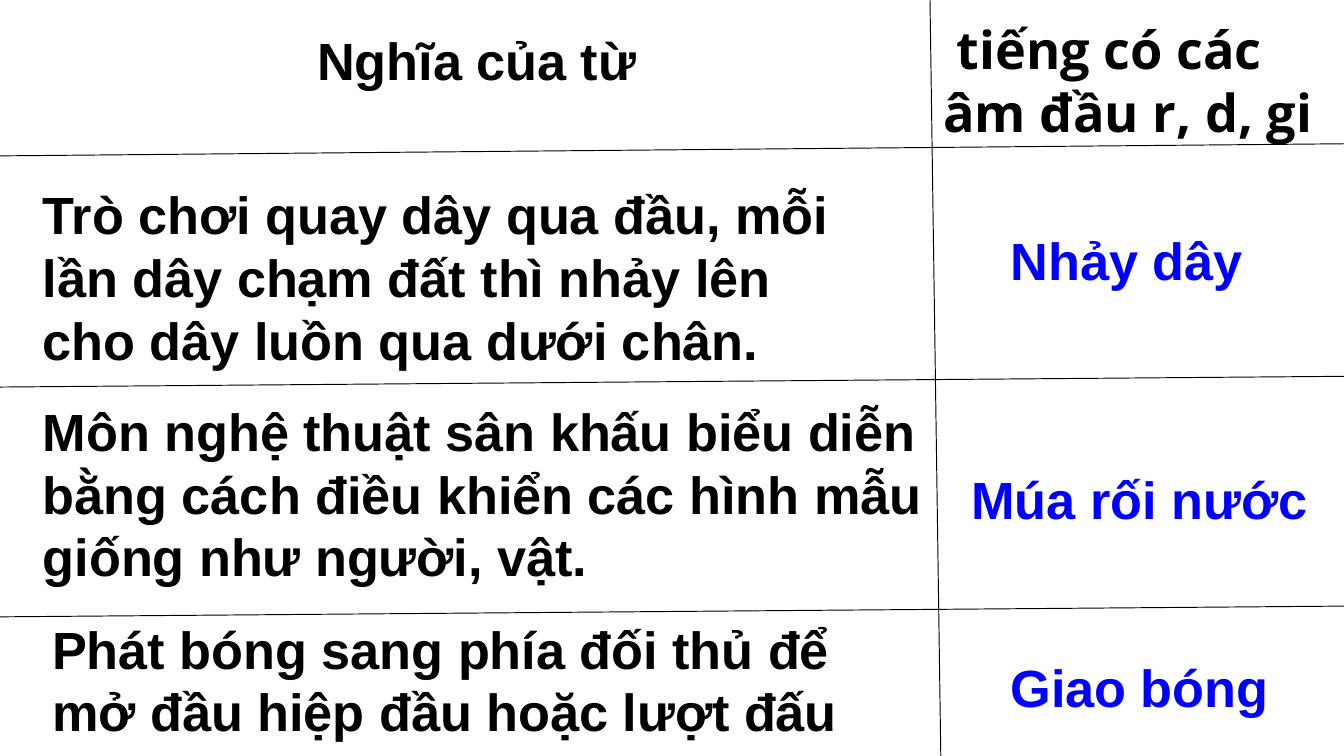
from dataclasses import dataclass

from pptx import Presentation
from pptx.dml.color import RGBColor
from pptx.enum.shapes import MSO_CONNECTOR as Connector
from pptx.enum.text import MSO_ANCHOR as Anchor, MSO_AUTO_SIZE as AutoSize, PP_ALIGN as Align
from pptx.oxml.ns import qn
from pptx.shapes.base import BaseShape
from pptx.slide import Slide
from pptx.util import Inches, Pt

PAGE_WIDTH = 10
PAGE_HEIGHT = PAGE_WIDTH * 9 / 16


@dataclass(frozen=True)
class Theme:
    ink: RGBColor = RGBColor(0x00, 0x00, 0x00)
    answer: RGBColor = RGBColor(0x00, 0x00, 0xFF)
    font: str = "Arial"
    heading_font: str = "Open Sans"
    text_size: Pt = Pt(28)
    line_width: Pt = Pt(0.5)


THEME = Theme()


@dataclass(frozen=True)
class Label:
    text: str
    left: float
    top: float
    width: float
    height: float
    color: RGBColor = THEME.ink
    font: str = THEME.font
    wrap: bool = True


@dataclass(frozen=True)
class Rule:
    start_x: float
    start_y: float
    end_x: float
    end_y: float


HEADING = Label("Nghĩa của từ", 2.26, 0.16, 2.61, 0.57, wrap=False)
SOUND_HEADING = Label(" tiếng có các âm đầu r, d, gi", 6.92, 0.08, 3.09, 1.04,
                      font=THEME.heading_font)

MEANINGS = [
    Label("Trò chơi quay dây qua đầu, mỗi lần dây chạm đất thì nhảy lên "
          "cho dây luồn qua dưới chân.", 0.22, 1.31, 6.06, 1.51),
    Label("Môn nghệ thuật sân khấu biểu diễn bằng cách điều khiển các hình mẫu "
          "giống như người, vật.", 0.22, 2.92, 6.78, 1.51),
    Label("Phát bóng sang phía đối thủ để mở đầu hiệp đầu hoặc lượt đấu",
          0.29, 4.54, 6.62, 1.04),
]

ANSWERS = [
    Label(text, left, top, width, 0.57, color=THEME.answer, wrap=False)
    for text, left, top, width in [
        ("Nhảy dây", 7.42, 1.65, 1.95),
        ("Múa rối nước", 7.13, 3.43, 2.73),
        ("Giao bóng", 7.42, 4.83, 2.14),
    ]
]

ROW_RULES = [Rule(0, left_y, PAGE_WIDTH, right_y)
             for left_y, right_y in [(1.16, 1.07), (2.88, 2.8), (4.59, 4.51)]]
COLUMN_RULE = Rule(7, PAGE_HEIGHT, 6.92, 0)


def draw_rule(page: Slide, rule: Rule) -> None:
    line = page.shapes.add_connector(
        Connector.STRAIGHT, Inches(rule.start_x), Inches(rule.start_y),
        Inches(rule.end_x), Inches(rule.end_y))
    line.line.color.rgb = THEME.ink
    line.line.width = THEME.line_width
    # An empty effect list removes the connector's shadow
    properties = line._element.spPr
    properties.append(properties.makeelement(qn("a:effectLst"), {}))


def fill_label(box: BaseShape, label: Label) -> None:
    box.left, box.top = Inches(label.left), Inches(label.top)
    box.width, box.height = Inches(label.width), Inches(label.height)
    frame = box.text_frame
    frame.text = label.text
    frame.word_wrap = label.wrap
    frame.auto_size = AutoSize.SHAPE_TO_FIT_TEXT
    frame.vertical_anchor = Anchor.TOP
    para = frame.paragraphs[0]
    para.alignment = Align.LEFT
    for span in para.runs:
        span.font.name = label.font
        span.font.size = THEME.text_size
        span.font.bold = True
        span.font.color.rgb = label.color


def add_label(page: Slide, label: Label) -> None:
    box = page.shapes.add_textbox(Inches(label.left), Inches(label.top),
                                  Inches(label.width), Inches(label.height))
    fill_label(box, label)


def main() -> None:
    deck = Presentation()
    deck.slide_width, deck.slide_height = Inches(PAGE_WIDTH), Inches(PAGE_HEIGHT)
    page = deck.slides.add_slide(deck.slide_layouts.get_by_name("Title Only"))

    # Grid lines
    for rule in [*ROW_RULES, COLUMN_RULE]:
        draw_rule(page, rule)

    # Column headings
    fill_label(page.shapes.title, HEADING)
    add_label(page, SOUND_HEADING)

    # Meanings on the left, answers on the right
    for label in [*MEANINGS, *ANSWERS]:
        add_label(page, label)

    deck.save("out.pptx")


if __name__ == "__main__":
    main()
